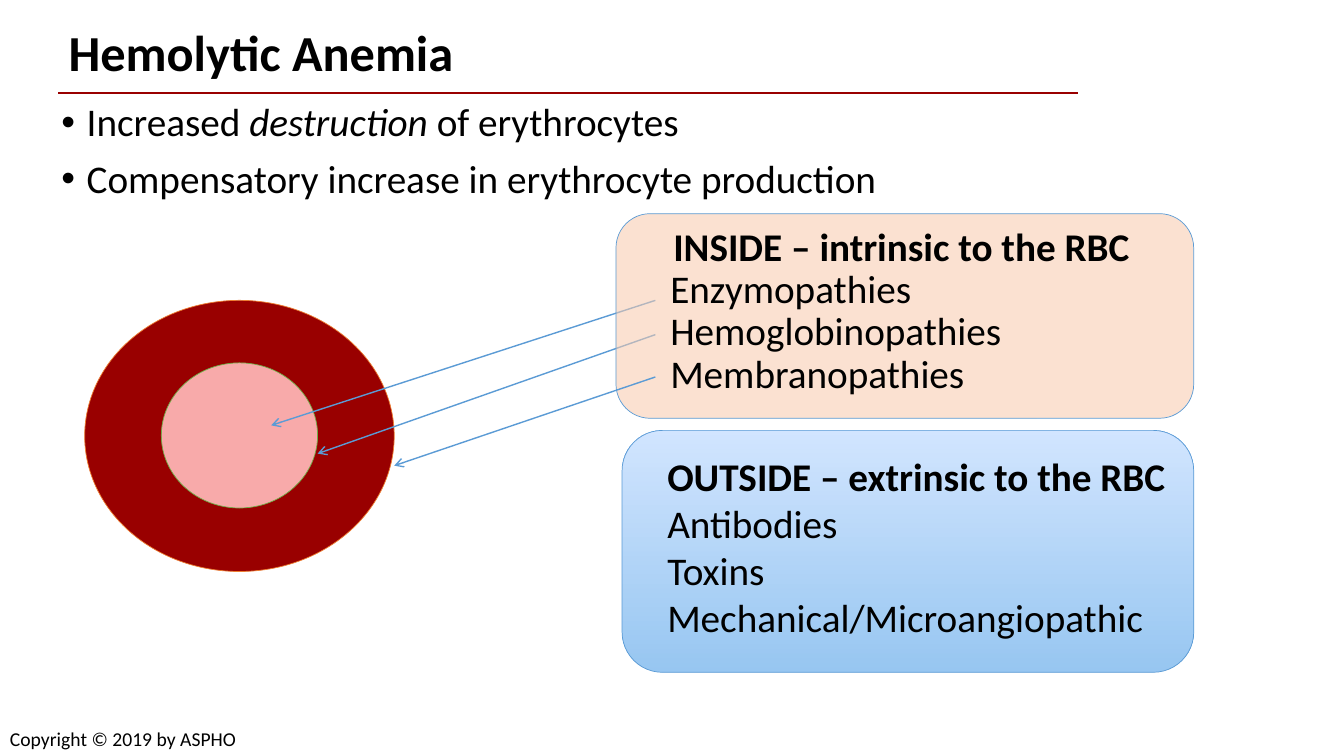
from dataclasses import dataclass

import pptx
import pptx.dml.color
import pptx.enum.dml
import pptx.enum.shapes
import pptx.enum.text
import pptx.oxml
import pptx.oxml.ns
import pptx.util
from pptx.util import Inches

RGB = pptx.dml.color.RGBColor
SHAPE = pptx.enum.shapes.MSO_SHAPE
TEXT = pptx.enum.text

BLACK = RGB(0x00, 0x00, 0x00)
RED = RGB(0x99, 0x00, 0x00)
PINK = RGB(0xF8, 0xAA, 0xAA)
PEACH = RGB(0xF8, 0xCB, 0xAD)
SKY = RGB(0xB0, 0xD2, 0xFF)
AZURE = RGB(0x49, 0x9C, 0xE7)
BLUE = RGB(0x5B, 0x9B, 0xD5)
ORANGE = RGB(0xED, 0x7D, 0x31)
GREEN = RGB(0x70, 0xAD, 0x47)


@dataclass
class Form:
    kind: int
    box: tuple[float, ...]
    fills: tuple[RGB, ...]
    edge: RGB
    alpha: int = 100


@dataclass
class Line:
    start: tuple[float, float]
    end: tuple[float, float]
    color: RGB = BLUE
    width: float = 1
    arrow: bool = True


@dataclass
class Para:
    text: str
    size: float = 28
    bold: bool = False
    left: float = 0
    space: float = 1
    before: float = 0
    bullet: bool = False


def add_node(parent, tag: str, **attrs: str):
    node = pptx.oxml.parse_xml(f"<a:{tag} {pptx.oxml.ns.nsdecls('a')}/>")
    for name, value in attrs.items():
        node.set(name, value)
    parent.append(node)


def draw_form(slide, form: Form) -> None:
    shape = slide.shapes.add_shape(form.kind, *map(Inches, form.box))
    shape.shadow.inherit = False
    if len(form.fills) == 1:
        shape.fill.solid()
        shape.fill.fore_color.rgb = form.fills[0]
    else:
        shape.fill.gradient()
        shape.fill.gradient_angle = 90
        for stop, color in zip(shape.fill.gradient_stops, form.fills):
            stop.color.rgb = color
    if form.alpha < 100:
        for node in shape._element.spPr.iter(pptx.oxml.ns.qn("a:srgbClr")):
            add_node(node, "alpha", val=str(form.alpha * 1000))
    shape.line.color.rgb = form.edge
    shape.line.width = pptx.util.Pt(0.5)


def draw_line(slide, line: Line) -> None:
    kind = pptx.enum.shapes.MSO_CONNECTOR.STRAIGHT
    shape = slide.shapes.add_connector(kind, *map(Inches, line.start + line.end))
    shape.line.color.rgb = line.color
    shape.line.width = pptx.util.Pt(line.width)
    if line.arrow:
        add_node(shape.line._get_or_add_ln(), "tailEnd", type="arrow")
    add_node(shape._element.spPr, "effectLst")


def write(shape, box: tuple[float, ...], paras: list[Para]) -> None:
    shape.left, shape.top, shape.width, shape.height = map(Inches, box)
    frame = shape.text_frame
    frame.word_wrap = True
    frame.auto_size = TEXT.MSO_AUTO_SIZE.NONE
    frame.vertical_anchor = TEXT.MSO_ANCHOR.TOP
    for i, para in enumerate(paras):
        line = frame.paragraphs[0] if i == 0 else frame.add_paragraph()
        # Asterisks mark the italic part
        for j, part in enumerate(para.text.split("*")):
            run = line.add_run()
            run.text = part
            if j % 2:
                run.font.italic = True
        line.alignment = TEXT.PP_ALIGN.LEFT
        line.line_spacing = para.space
        line.space_before = pptx.util.Pt(para.before if i else 0)
        props = line._p.get_or_add_pPr()
        props.set("marL", str(Inches(para.left)))
        props.set("indent", str(Inches(-para.left if para.bullet else 0)))
        if para.bullet:
            add_node(props, "buFont", typeface="Arial")
            add_node(props, "buChar", char="•")
        line.font.name = "Calibri"
        line.font.size = pptx.util.Pt(para.size)
        line.font.bold = para.bold
        line.font.color.rgb = BLACK


def add_text(slide, box: tuple[float, ...], paras: list[Para]) -> None:
    write(slide.shapes.add_textbox(*map(Inches, box)), box, paras)


def main() -> None:
    deck = pptx.Presentation()
    deck.slide_width, deck.slide_height = Inches(13.33), Inches(7.5)
    slide = deck.slides.add_slide(deck.slide_layouts[1])

    # Title and main points
    write(slide.shapes.title, (0.58, 0.23, 12.2, 0.88),
          [Para("Hemolytic Anemia", size=36, bold=True, space=0.9)])
    points = ("Increased *destruction *of erythrocytes",
              "Compensatory increase in erythrocyte production")
    write(slide.placeholders[1], (0.51, 0.97, 12.78, 1.51),
          [Para(text, left=0.25, space=0.9, before=10, bullet=True)
           for text in points])
    draw_line(slide, Line((0.58, 0.92), (10.69, 0.92), RED, 1.5, False))

    # Cell, panels and arrows, from back to front
    parts = (
        Form(SHAPE.ROUNDED_RECTANGLE, (6.17, 4.27, 5.67, 2.4),
             (AZURE, SKY), BLUE, 56),
        Form(SHAPE.OVAL, (0.84, 2.98, 3.07, 2.69), (RED,), ORANGE),
        Form(SHAPE.OVAL, (1.6, 3.6, 1.55, 1.44), (PINK,), GREEN),
        Line((6.5, 2.98), (2.69, 4.22)),
        Line((6.5, 3.32), (3.15, 4.5)),
        Form(SHAPE.ROUNDED_RECTANGLE, (6.11, 2.12, 5.73, 2.03),
             (PEACH,), BLUE, 56),
        Line((6.5, 3.74), (3.91, 4.62)),
    )
    for part in parts:
        if isinstance(part, Form):
            draw_form(slide, part)
        else:
            draw_line(slide, part)

    # Panel texts
    inner = ("Enzymopathies", "Hemoglobinopathies", "Membranopathies")
    add_text(slide, (6.05, 2.16, 5.4, 2.0),
             [Para("INSIDE – intrinsic to the RBC", bold=True, left=0.53)]
             + [Para(text, left=0.5, space=0.9) for text in inner])
    outer = ("Antibodies", "Toxins", "Mechanical/Microangiopathic")
    add_text(slide, (6.26, 4.44, 5.55, 2.2),
             [Para("OUTSIDE – extrinsic to the RBC", bold=True, left=0.26)]
             + [Para(text, left=0.26) for text in outer])

    # Footer
    add_text(slide, (0, 7.16, 2.48, 0.34),
             [Para("Copyright © 2019 by ASPHO", size=14)])
    deck.save("out.pptx")


if __name__ == "__main__":
    main()
